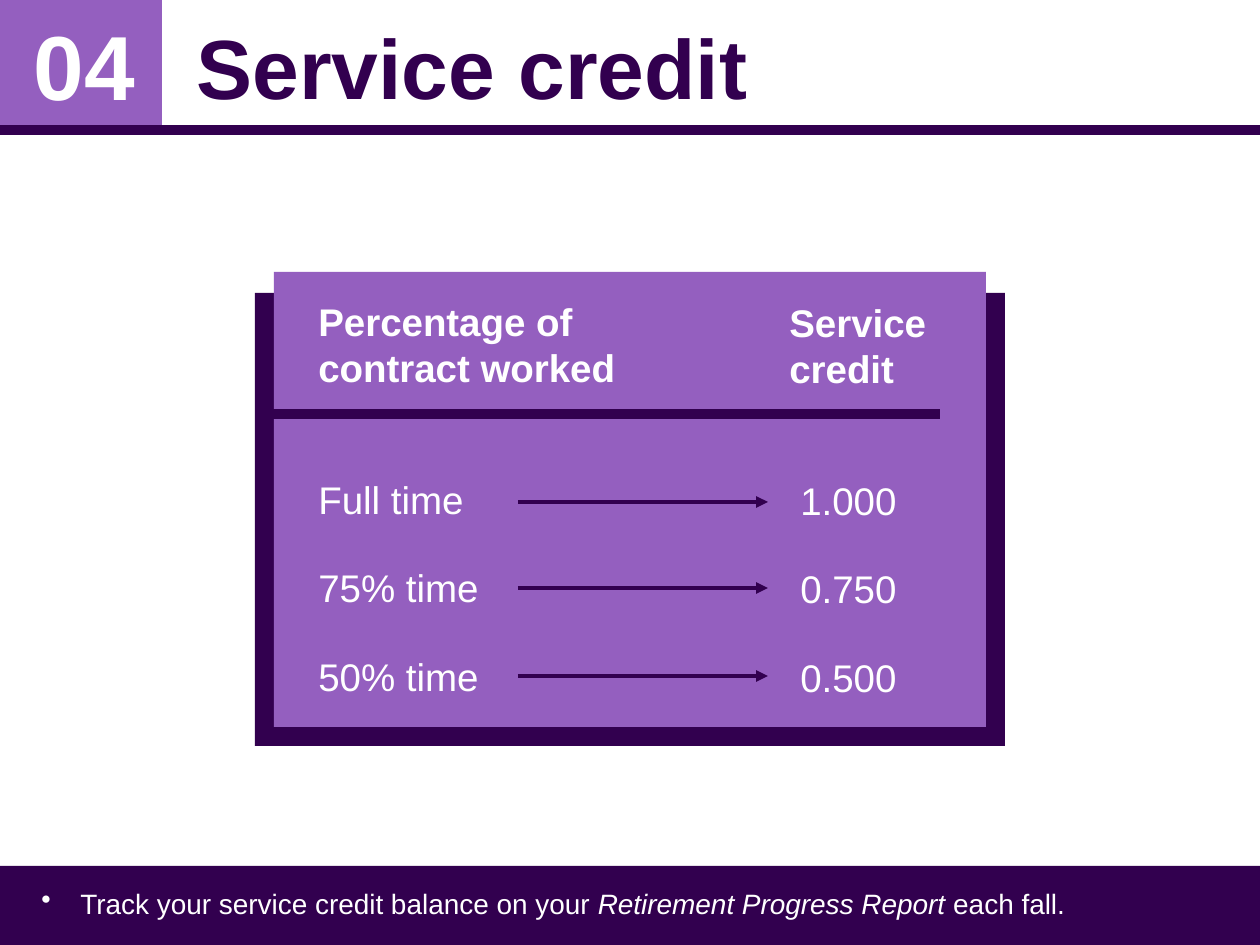
import pptx
import pptx.util
import pptx.dml.color
import pptx.enum.shapes
import pptx.enum.text
import pptx.oxml.ns
import lxml.etree
from dataclasses import dataclass

PX = 914400 / 126  # EMU per pixel


@dataclass(frozen=True)
class Theme:
    dark: str = "32004F"
    light: str = "945FBF"
    white: str = "FFFFFF"
    font: str = "Arial"
    title: int = 48
    number: int = 52
    body: int = 22
    note: int = 16
    rule: float = 6
    arrow: float = 2.25


theme = Theme()
color = pptx.dml.color.RGBColor.from_string
anchors = pptx.enum.text.MSO_ANCHOR
aligns = pptx.enum.text.PP_ALIGN
qn = pptx.oxml.ns.qn

deck = pptx.Presentation()
deck.slide_width, deck.slide_height = round(1260 * PX), round(945 * PX)
page = deck.slides.add_slide(deck.slide_layouts[5])


def write(text, *, at, size, box=None, bold=False, hue=theme.white, anchor=anchors.TOP,
          align=aligns.LEFT, after=0, leading=1.0, bullet_indent=0, grow=False):
    """Write one paragraph per line; words between asterisks are italic."""
    place = [round(value * PX) for value in at]
    box = box or page.shapes.add_textbox(*place)
    box.left, box.top, box.width, box.height = place
    frame = box.text_frame
    frame.word_wrap = True
    frame.vertical_anchor = anchor
    sizing = pptx.enum.text.MSO_AUTO_SIZE
    frame.auto_size = sizing.SHAPE_TO_FIT_TEXT if grow else sizing.NONE
    for index, line in enumerate(text.split("\n")):
        para = frame.add_paragraph() if index else frame.paragraphs[0]
        para.alignment = align
        para.line_spacing = leading
        para.space_before = pptx.util.Pt(0)
        para.space_after = pptx.util.Pt(after)
        if bullet_indent:
            properties = para._p.get_or_add_pPr()
            indent = round(bullet_indent * PX)
            properties.set("marL", str(indent))
            properties.set("indent", str(-indent))
            lxml.etree.SubElement(properties, qn("a:buChar")).set("char", "•")
        for part, words in enumerate(line.split("*")):
            span = para.add_run()
            span.text = words
            span.font.name = theme.font
            span.font.size = pptx.util.Pt(size)
            span.font.bold = bold
            span.font.italic = part % 2 == 1
            span.font.color.rgb = color(hue)


def draw_line(left, right, y, weight, arrow=False):
    line = page.shapes.add_connector(
        pptx.enum.shapes.MSO_CONNECTOR.STRAIGHT,
        *(round(value * PX) for value in (left, y, right, y)))
    line.line.color.rgb = color(theme.dark)
    line.line.width = pptx.util.Pt(weight)
    if arrow:
        outline = line.line._get_or_add_ln()
        lxml.etree.SubElement(outline, qn("a:tailEnd")).set("type", "triangle")
    lxml.etree.SubElement(line._element.spPr, qn("a:effectLst"))


# Number block, footer band, card shadow and card
for area, fill in (
    ((0, 0, 162, 130), theme.light),
    ((0, 866, 1260, 79), theme.dark),
    ((255, 293, 750, 453), theme.dark),
    ((274, 272, 712, 455), theme.light),
):
    block = page.shapes.add_shape(
        pptx.enum.shapes.MSO_SHAPE.RECTANGLE, *(round(value * PX) for value in area))
    block.shadow.inherit = False
    block.fill.solid()
    block.fill.fore_color.rgb = color(fill)
    block.line.fill.background()

# Header
draw_line(0, 1260, 130, theme.rule)
write("Service credit", box=page.shapes.title, at=(184, 1, 1055, 129), size=theme.title,
      bold=True, hue=theme.dark, anchor=anchors.MIDDLE)
write("04", at=(21, 10, 127, 121), size=theme.number, bold=True,
      anchor=anchors.MIDDLE, align=aligns.CENTER, leading=0.9)

# Card headings
write("Percentage of contract worked", at=(306, 292, 328, 106), size=theme.body,
      bold=True, after=24, grow=True)
write("Service credit", at=(777, 293, 192, 106), size=theme.body,
      bold=True, after=24, grow=True)
draw_line(266, 940, 414, theme.rule)

# Card rows
write("Full time\n75% time\n50% time", at=(306, 470, 202, 237), size=theme.body,
      after=24, grow=True)
write("1.000\n0.750\n0.500", at=(788, 471, 164, 237), size=theme.body,
      after=24, grow=True)
for y in (502, 588, 676):
    draw_line(518, 768, y, theme.arrow, arrow=True)

# Footer note
write("Track your service credit balance on your *Retirement Progress Report* each fall.",
      at=(29, 880, 1208, 47), size=theme.note, bullet_indent=39, grow=True)

deck.save("out.pptx")
